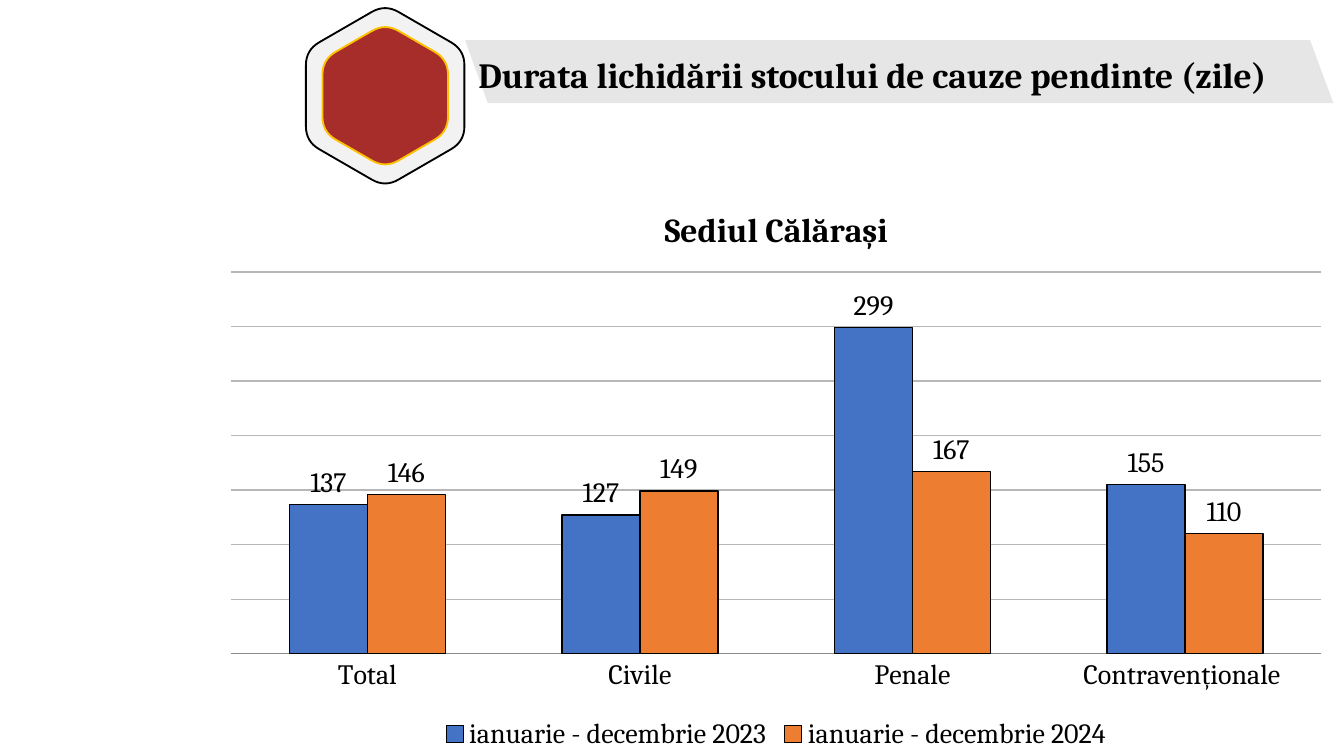
import math
from dataclasses import dataclass

from lxml import etree
from pptx import Presentation
from pptx import util as u
from pptx.chart.data import CategoryChartData
from pptx.dml.color import RGBColor
from pptx.enum import chart as ch
from pptx.oxml import ns

FONT = "Cambria"
BLACK = "000000"


@dataclass
class Hexagon:
    radius: float
    fill: str
    line: str


@dataclass
class Series:
    name: str
    values: tuple[int, ...]
    color: str
    label_format: str


HEXAGONS = [Hexagon(1.73, "F2F2F2", BLACK), Hexagon(1.37, "A72D2A", "FFC000")]
HEX_CENTER = (7.28, 1.81)
HEX_TRIM = 0.29

CATEGORIES = ["Total", "Civile", "Penale", "Contravenționale "]
SERIES = [
    Series("ianuarie - decembrie 2023", (137, 127, 299, 155), "4472C4", "#,##0"),
    Series("ianuarie - decembrie 2024", (146, 149, 167, 110), "ED7D31", "0"),
]


def rgb(value: str) -> RGBColor:
    return RGBColor.from_string(value)


def set_font(font, size: float, bold: bool = False) -> None:
    font.name = FONT
    font.size = u.Pt(size)
    font.bold = bold
    font.color.rgb = rgb(BLACK)


def set_line(line, color: str, width: float) -> None:
    line.color.rgb = rgb(color)
    line.width = u.Pt(width)


def add_outline(s, points: list[tuple[float, float]], fill: str):
    """Draw a closed outline from points in centimetres."""
    start, *rest = [(u.Cm(x), u.Cm(y)) for x, y in points]
    builder = s.shapes.build_freeform(*start)
    builder.add_line_segments(rest, close=True)
    sp = builder.convert_to_shape()
    sp.shadow.inherit = False
    sp.fill.solid()
    sp.fill.fore_color.rgb = rgb(fill)
    sp.line.fill.background()
    return sp


def hexagon_points(radius: float) -> list[tuple[float, float]]:
    """Start, middle and end of each rounded corner of an upright hexagon."""
    cx, cy = HEX_CENTER
    angles = [math.radians(60 * i - 90) for i in range(6)]
    corners = [(cx + radius * math.cos(a), cy + radius * math.sin(a)) for a in angles]
    share = HEX_TRIM / radius
    points = []
    for i, corner in enumerate(corners):
        before, after = corners[i - 1], corners[(i + 1) % 6]
        for t in (0, 0.5, 1):
            points.append(tuple(
                c + share * ((1 - t) ** 2 * (b - c) + t ** 2 * (a - c))
                for b, c, a in zip(before, corner, after)))
    return points


def round_corners(sp) -> None:
    """Turn every start, middle, end triple of the outline into one curve."""
    path = sp._element.find(".//" + ns.qn("a:path"))
    nodes = [n for n in path if len(n)]
    spots = [(int(n[0].get("x")), int(n[0].get("y"))) for n in nodes]
    for i in range(0, 18, 3):
        start, middle, end = spots[i:i + 3]
        corner = [2 * m - (a + b) / 2 for a, m, b in zip(start, middle, end)]
        handles = [[(p + 2 * c) / 3 for p, c in zip(spot, corner)] for spot in (start, end)]
        curve = etree.Element(ns.qn("a:cubicBezTo"))
        for x, y in (*handles, end):
            etree.SubElement(curve, ns.qn("a:pt"), x=str(round(x)), y=str(round(y)))
        path.replace(nodes[i + 1], curve)
        path.remove(nodes[i + 2])


def add_heading(s, content: str) -> None:
    tf = s.shapes.add_textbox(u.Cm(8.79), u.Cm(0.76), u.Cm(16.61), u.Cm(1.12)).text_frame
    tf.word_wrap = True
    tf.text = content
    p = tf.paragraphs[0]
    p.line_spacing = 1.15
    p.space_after = u.Pt(10)
    set_font(p.runs[0].font, 19, bold=True)


def add_duration_chart(s, title: str) -> None:
    data = CategoryChartData()
    data.categories = CATEGORIES
    for item in SERIES:
        data.add_series(item.name, item.values)
    chart = s.shapes.add_chart(
        ch.XL_CHART_TYPE.COLUMN_CLUSTERED,
        u.Cm(3.94), u.Cm(3.45), u.Cm(21.46), u.Cm(10.84), data).chart
    set_font(chart.font, 15)
    chart.has_title = True
    tf = chart.chart_title.text_frame
    tf.text = title
    set_font(tf.paragraphs[0].runs[0].font, 18, bold=True)
    chart.has_legend = True
    chart.legend.position = ch.XL_LEGEND_POSITION.BOTTOM
    chart.legend.include_in_layout = False
    set_font(chart.legend.font, 15)

    # Axes
    axis = chart.category_axis
    axis.major_tick_mark = ch.XL_TICK_MARK.NONE
    set_line(axis.format.line, "8B8B8B", 0.75)
    set_font(axis.tick_labels.font, 15)
    axis = chart.value_axis
    axis.minimum_scale, axis.maximum_scale, axis.major_unit = 0, 350, 50
    axis.tick_labels.number_format = "#,##0"
    axis.tick_labels.number_format_is_linked = False
    axis.has_major_gridlines = True
    set_line(axis.major_gridlines.format.line, "B7B7B7", 0.75)
    axis.visible = False

    # Columns and their labels
    plot = chart.plots[0]
    plot.gap_width = 150
    plot.overlap = 0
    plot.vary_by_categories = False
    for series, item in zip(plot.series, SERIES):
        series.format.fill.solid()
        series.format.fill.fore_color.rgb = rgb(item.color)
        set_line(series.format.line, BLACK, 0.75)
        labels = series.data_labels
        labels.show_value = True
        labels.number_format = item.label_format
        labels.number_format_is_linked = False
        labels.position = ch.XL_LABEL_POSITION.OUTSIDE_END
        set_font(labels.font, 15)


def main() -> None:
    prs = Presentation()
    prs.slide_width, prs.slide_height = u.Cm(25.4), u.Cm(14.29)
    s = prs.slides.add_slide(prs.slide_layouts[6])

    # Emblem
    for item in HEXAGONS:
        sp = add_outline(s, hexagon_points(item.radius), item.fill)
        set_line(sp.line, item.line, 1)
        round_corners(sp)

    # Heading on its slanted band
    add_outline(s, [(8.79, 0.76), (24.76, 0.76), (25.2, 1.95), (9.22, 1.95)], "E6E6E6")
    add_heading(s, "Durata lichidării stocului de cauze pendinte (zile)")

    add_duration_chart(s, "Sediul Călărași")
    prs.save("out.pptx")


if __name__ == "__main__":
    main()
